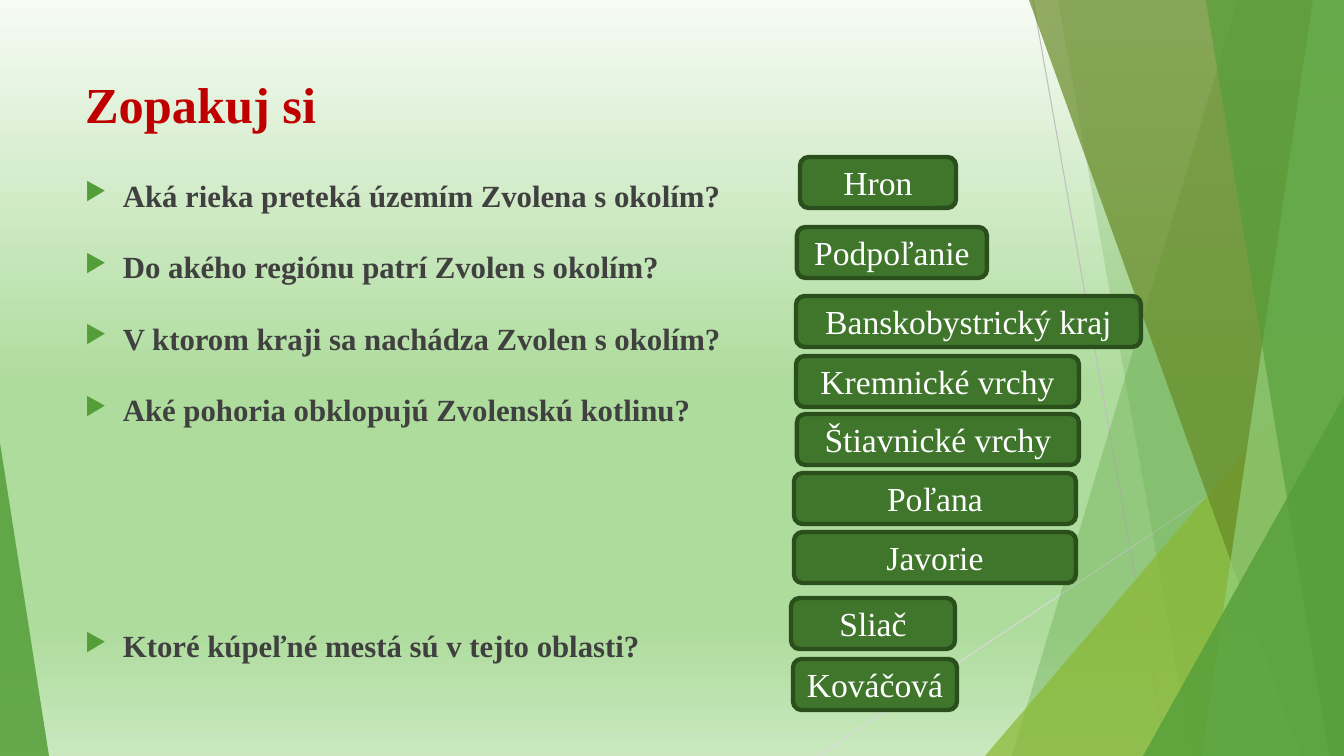
from lxml import etree
from pptx import Presentation
from pptx.dml.color import RGBColor
from pptx.enum.shapes import MSO_CONNECTOR, MSO_SHAPE
from pptx.enum.text import MSO_ANCHOR, PP_ALIGN
from pptx.oxml.ns import qn
from pptx.util import Emu, Pt

STRAIGHT = MSO_CONNECTOR.STRAIGHT
TRIANGLE = MSO_SHAPE.ISOSCELES_TRIANGLE
ROUNDED = MSO_SHAPE.ROUNDED_RECTANGLE
TOP, MIDDLE = MSO_ANCHOR.TOP, MSO_ANCHOR.MIDDLE
LEFT, CENTER = PP_ALIGN.LEFT, PP_ALIGN.CENTER

PX = 914400 / 100.8
WIDTH, HEIGHT = 1344, 756
FONT = "Times New Roman"

GREEN = RGBColor(0x54, 0x9E, 0x39)
LIME = RGBColor(0x8A, 0xB8, 0x33)
OLIVE = RGBColor(0x67, 0x8A, 0x26)
PALE_GREEN = RGBColor(0x93, 0xD0, 0x7D)
BUTTON_FILL = RGBColor(0x3F, 0x76, 0x2B)
BUTTON_LINE = RGBColor(0x2A, 0x4F, 0x1C)
GREY = RGBColor(0xBF, 0xBF, 0xBF)
LIGHT_GREY = RGBColor(0xD9, 0xD9, 0xD9)
DARK_GREY = RGBColor(0x40, 0x40, 0x40)
RED = RGBColor(0xC0, 0x00, 0x00)
WHITE = RGBColor(0xFF, 0xFF, 0xFF)
BACKDROP = [
    (0, RGBColor(0xF6, 0xFB, 0xF4)),
    (51, RGBColor(0xAE, 0xDC, 0x9D)),
    (83, RGBColor(0xAE, 0xDC, 0x9D)),
    (100, RGBColor(0xC9, 0xE8, 0xBE)),
]

QUESTIONS = [
    ("Aká rieka preteká územím Zvolena s okolím?", 0),
    ("Do akého regiónu patrí Zvolen s okolím?", 11.5),
    ("V ktorom kraji sa nachádza Zvolen s okolím?", 11.5),
    ("Aké pohoria obklopujú Zvolenskú kotlinu?", 11.5),
    ("Ktoré kúpeľné mestá sú v tejto oblasti?", 129),
]
ANSWERS = [
    ("Hron", 800, 157, 156),
    ("Podpoľanie", 797, 227, 190),
    ("Banskobystrický kraj", 796, 296, 345),
    ("Kremnické vrchy", 796, 356, 283),
    ("Štiavnické vrchy", 797, 414, 282),
    ("Poľana", 794, 473, 282),
    ("Javorie", 794, 532, 282),
    ("Sliač", 791, 598, 164),
    ("Kováčová", 793, 659, 164),
]


def px(length):
    return Emu(round(length * PX))


def write(para, text, *, size, color, bold=False, align=LEFT):
    para.alignment = align
    span = para.add_run()
    span.text = text
    span.font.name = FONT
    span.font.size = Pt(size)
    span.font.bold = bold
    span.font.color.rgb = color


def add_child(parent, tag, **attributes):
    return etree.SubElement(parent, qn(tag), attributes)


def add_bullet(para, indent):
    props = para._p.get_or_add_pPr()
    props.set("marL", str(px(indent)))
    props.set("indent", str(-px(indent)))
    color = add_child(props, "a:buClr")
    add_child(color, "a:srgbClr", val=str(GREEN))
    add_child(props, "a:buSzPct", val="80000")
    add_child(props, "a:buChar", char="▶")


def paint(shape, color, opacity):
    shape.shadow.inherit = False
    shape.fill.solid()
    shape.fill.fore_color.rgb = color
    shape.line.fill.background()
    swatch = shape.fill._xPr.find(".//" + qn("a:srgbClr"))
    add_child(swatch, "a:alpha", val=str(opacity * 1000))


def add_backdrop(page):
    fill = page.background.fill
    fill.gradient()
    fill.gradient_angle = 270
    stops = fill._xPr.find(".//" + qn("a:gsLst"))
    for stop in list(stops):
        stops.remove(stop)
    for position, color in BACKDROP:
        stop = add_child(stops, "a:gs", pos=str(position * 1000))
        add_child(stop, "a:srgbClr", val=str(color))


def add_ray(page, start, end, color):
    ray = page.shapes.add_connector(STRAIGHT, *map(px, start + end))
    ray.line.color.rgb = color
    ray.line.width = Pt(0.75)
    add_child(ray._element.spPr, "a:effectLst")


def add_facet(page, top_left, bottom_left, color, opacity):
    builder = page.shapes.build_freeform(top_left, 0, scale=PX)
    builder.add_line_segments(
        [(WIDTH, 0), (WIDTH, HEIGHT), (bottom_left, HEIGHT)], close=True)
    paint(builder.convert_to_shape(), color, opacity)


def add_corner(page, left, top, width, apex, color, opacity):
    corner = page.shapes.add_shape(
        TRIANGLE, px(left), px(top), px(width), px(HEIGHT - top))
    corner.adjustments[0] = apex
    paint(corner, color, opacity)


def add_decoration(page):
    add_ray(page, (1033, 0), (1167, HEIGHT), GREY)
    add_ray(page, (WIDTH, 406), (818, HEIGHT), LIGHT_GREY)
    add_facet(page, 1238, 1012, GREEN, 30)
    add_facet(page, 1058, 1192, GREEN, 20)
    add_corner(page, 985, 336, 359, 1, LIME, 72)
    add_facet(page, 1029, 1301, OLIVE, 70)
    add_facet(page, 1313, 1202, PALE_GREEN, 70)
    add_facet(page, 1206, 1329, GREEN, 65)
    add_corner(page, 1143, 396, 201, 1, GREEN, 80)
    add_corner(page, 0, 443, 49, 0, GREEN, 85)


def add_title(page, left, top, width, height):
    title = page.shapes.title
    title.left, title.top = px(left), px(top)
    title.width, title.height = px(width), px(height)
    title.text_frame.vertical_anchor = TOP
    write(title.text_frame.paragraphs[0], "Zopakuj si",
          size=36, color=RED, bold=True)


def add_questions(page, left, top, width, height):
    box = page.shapes.add_textbox(px(left), px(top), px(width), px(height))
    frame = box.text_frame
    frame.word_wrap = True
    for index, (question, gap) in enumerate(QUESTIONS):
        para = frame.add_paragraph() if index else frame.paragraphs[0]
        para.line_spacing = 1.5
        para.space_before = Pt(gap)
        add_bullet(para, 38)
        write(para, question, size=22, color=DARK_GREY, bold=True)


def add_answer(page, text, left, top, width, height=51):
    button = page.shapes.add_shape(
        ROUNDED, px(left), px(top), px(width), px(height))
    button.shadow.inherit = False
    button.fill.solid()
    button.fill.fore_color.rgb = BUTTON_FILL
    button.line.color.rgb = BUTTON_LINE
    button.line.width = Pt(3.15)
    frame = button.text_frame
    frame.vertical_anchor = MIDDLE
    frame.word_wrap = True
    write(frame.paragraphs[0], text, size=24, color=WHITE, align=CENTER)


def main():
    deck = Presentation()
    deck.slide_width, deck.slide_height = px(WIDTH), px(HEIGHT)
    page = deck.slides.add_slide(deck.slide_layouts.get_by_name("Title Only"))
    add_backdrop(page)
    add_decoration(page)
    add_title(page, 75, 68, 948, 145)
    add_questions(page, 75, 153, 1100, 570)
    for answer in ANSWERS:
        add_answer(page, *answer)
    deck.save("out.pptx")


if __name__ == "__main__":
    main()
